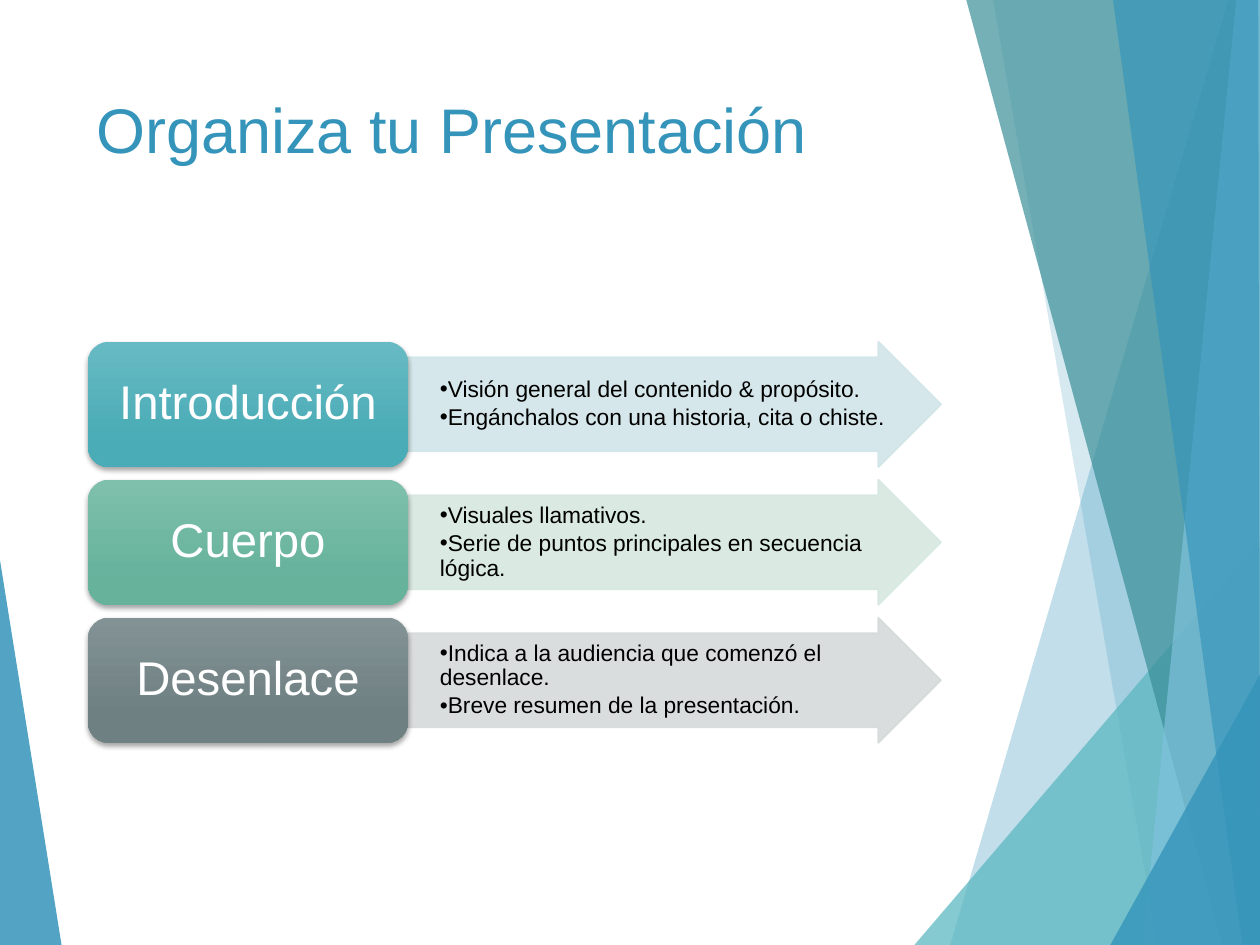
from dataclasses import dataclass

from lxml.etree import SubElement
from pptx import Presentation
from pptx.dml.color import RGBColor
from pptx.enum.shapes import MSO_CONNECTOR, MSO_SHAPE
from pptx.enum.text import MSO_ANCHOR, PP_ALIGN
from pptx.oxml.ns import qn
from pptx.util import Pt

FONT = "Arial"
COLORS = {
    "white": "FFFFFF",
    "black": "000000",
    "blue": "3494BA",
    "sky": "7FC1DB",
    "teal": "58B6C0",
    "dark_teal": "3A8F98",
    "intro_top": "67BAC3",
    "intro_bottom": "4AACB6",
    "intro_arrow": "D1E5E8",
    "body_top": "7FC0AC",
    "body_bottom": "66B29B",
    "body_arrow": "D6E8E1",
    "end_top": "839395",
    "end_bottom": "6F8082",
    "end_arrow": "D7DADB",
}
SLIDE_WIDTH, SLIDE_HEIGHT = 720, 540
BLOCK_LEFT, BLOCK_WIDTH = 50.2, 183
ARROW_LEFT, ARROW_WIDTH = BLOCK_LEFT + BLOCK_WIDTH, 304.5
ROW_TOP, ROW_HEIGHT, ROW_PITCH = 195.3, 71.6, 78.8
BULLET_WIDTH, BULLET_HEIGHT = 278, 54


@dataclass
class Facet:
    color: str
    opacity: int
    points: list[tuple[float, float]]


@dataclass
class Section:
    name: str
    palette: str
    bullets: list[str]


RAYS = [(404, 540, 720, 329), (554.5, 0, 651, 540)]
FACETS = [
    Facet("blue", 85, [(0, 320), (35.2, 540), (0, 540)]),
    Facet("blue", 30, [(702, 0), (543, 540), (720, 540), (720, 0)]),
    Facet("blue", 20, [(567.5, 0), (661.5, 540), (720, 540), (720, 0)]),
    Facet("teal", 72, [(522.5, 540), (720, 309), (720, 540)]),
    Facet("dark_teal", 70, [(552.2, 0), (698.5, 540), (720, 540), (720, 0)]),
    Facet("sky", 70, [(706.5, 0), (653, 540), (720, 540), (720, 0)]),
    Facet("blue", 65, [(636, 0), (710, 540), (720, 540), (719, 0)]),
    Facet("blue", 80, [(634.5, 540), (720, 385.5), (720, 540)]),
]
SECTIONS = [
    Section("Introducción", "intro", [
        "Visión general del contenido & propósito.",
        "Engánchalos con una historia, cita o chiste.",
    ]),
    Section("Cuerpo", "body", [
        "Visuales llamativos.",
        "Serie de puntos principales en secuencia lógica.",
    ]),
    Section("Desenlace", "end", [
        "Indica a la audiencia que comenzó el desenlace.",
        "Breve resumen de la presentación.",
    ]),
]


def rgb(name: str) -> RGBColor:
    return RGBColor.from_string(COLORS[name])


def set_solid(fill, color: str, opacity: int) -> None:
    fill.solid()
    fill.fore_color.rgb = rgb(color)
    color_element = fill._xPr.find(qn("a:solidFill"))[0]
    SubElement(color_element, qn("a:alpha"), val=str(opacity * 1000))


def set_text(text_frame, lines: list[str], size: float, color: str,
             margins: tuple[float, float], anchor=MSO_ANCHOR.MIDDLE) -> None:
    text_frame.text = "\n".join(lines)
    text_frame.word_wrap = True
    text_frame.vertical_anchor = anchor
    text_frame.margin_left = text_frame.margin_right = Pt(margins[0])
    text_frame.margin_top = text_frame.margin_bottom = Pt(margins[1])
    for paragraph in text_frame.paragraphs:
        for run in paragraph.runs:
            run.font.name = FONT
            run.font.size = Pt(size)
            run.font.color.rgb = rgb(color)


def add_ray(slide, ray: tuple[float, float, float, float]) -> None:
    connector = slide.shapes.add_connector(
        MSO_CONNECTOR.STRAIGHT, *[Pt(value) for value in ray])
    connector.line.color.rgb = rgb("white")
    connector.line.width = Pt(0.75)
    SubElement(connector._element.spPr, qn("a:effectLst"))


def add_facet(slide, facet: Facet) -> None:
    start, *others = [(Pt(x), Pt(y)) for x, y in facet.points]
    builder = slide.shapes.build_freeform(*start)
    builder.add_line_segments(others, close=True)
    shape = builder.convert_to_shape()
    shape.shadow.inherit = False
    set_solid(shape.fill, facet.color, facet.opacity)
    shape.line.fill.background()


def add_title(slide, title: str) -> None:
    shape = slide.shapes.add_textbox(Pt(48), Pt(48), Pt(500), Pt(104))
    set_text(shape.text_frame, [title], 36, "blue", (7.2, 3.6), MSO_ANCHOR.TOP)


def add_arrow(slide, section: Section, top: float) -> None:
    shape = slide.shapes.add_shape(
        MSO_SHAPE.RIGHT_ARROW, Pt(ARROW_LEFT), Pt(top), Pt(ARROW_WIDTH), Pt(ROW_HEIGHT))
    shape.adjustments[0] = 0.75
    shape.adjustments[1] = 0.5
    shape.shadow.inherit = False
    color = f"{section.palette}_arrow"
    set_solid(shape.fill, color, 90)
    set_solid(shape.line.fill, color, 90)
    shape.line.width = Pt(1)


def add_bullets(slide, section: Section, top: float) -> None:
    shape = slide.shapes.add_textbox(
        Pt(ARROW_LEFT), Pt(top + (ROW_HEIGHT - BULLET_HEIGHT) / 2),
        Pt(BULLET_WIDTH), Pt(BULLET_HEIGHT))
    set_text(shape.text_frame, section.bullets, 13, "black", (0.7, 0.7))
    for paragraph in shape.text_frame.paragraphs:
        paragraph.line_spacing = 0.9
        paragraph.space_after = Pt(2)
        properties = paragraph._p.get_or_add_pPr()
        properties.set("marL", str(Pt(17.5)))
        properties.set("indent", "0")
        SubElement(properties, qn("a:buFont"), typeface=FONT)
        SubElement(properties, qn("a:buChar"), char="•")


def add_block(slide, section: Section, top: float) -> None:
    shape = slide.shapes.add_shape(
        MSO_SHAPE.ROUNDED_RECTANGLE, Pt(BLOCK_LEFT), Pt(top), Pt(BLOCK_WIDTH), Pt(ROW_HEIGHT))
    shape.line.fill.background()
    shape.fill.gradient()
    shape.fill.gradient_angle = 270
    for stop, position, edge in zip(shape.fill.gradient_stops, (0, 0.78), ("top", "bottom")):
        stop.position = position
        stop.color.rgb = rgb(f"{section.palette}_{edge}")
    shape.shadow.inherit = False
    effects = shape._element.spPr.find(qn("a:effectLst"))
    shadow = SubElement(effects, qn("a:outerShdw"), blurRad=str(Pt(3)),
                        dist=str(Pt(2)), dir="5400000", rotWithShape="0")
    shadow_color = SubElement(shadow, qn("a:srgbClr"), val=COLORS["black"])
    SubElement(shadow_color, qn("a:alpha"), val="35000")
    set_text(shape.text_frame, [section.name], 27, "white", (8, 4))
    paragraph = shape.text_frame.paragraphs[0]
    paragraph.alignment = PP_ALIGN.CENTER
    paragraph.line_spacing = 0.9


def main() -> None:
    presentation = Presentation()
    presentation.slide_width = Pt(SLIDE_WIDTH)
    presentation.slide_height = Pt(SLIDE_HEIGHT)
    slide = presentation.slides.add_slide(presentation.slide_layouts[6])
    for ray in RAYS:
        add_ray(slide, ray)
    for facet in FACETS:
        add_facet(slide, facet)
    add_title(slide, "Organiza tu Presentación")
    for index, section in enumerate(SECTIONS):
        top = ROW_TOP + index * ROW_PITCH
        add_arrow(slide, section, top)
        add_bullets(slide, section, top)
        add_block(slide, section, top)
    presentation.save("out.pptx")


if __name__ == "__main__":
    main()
